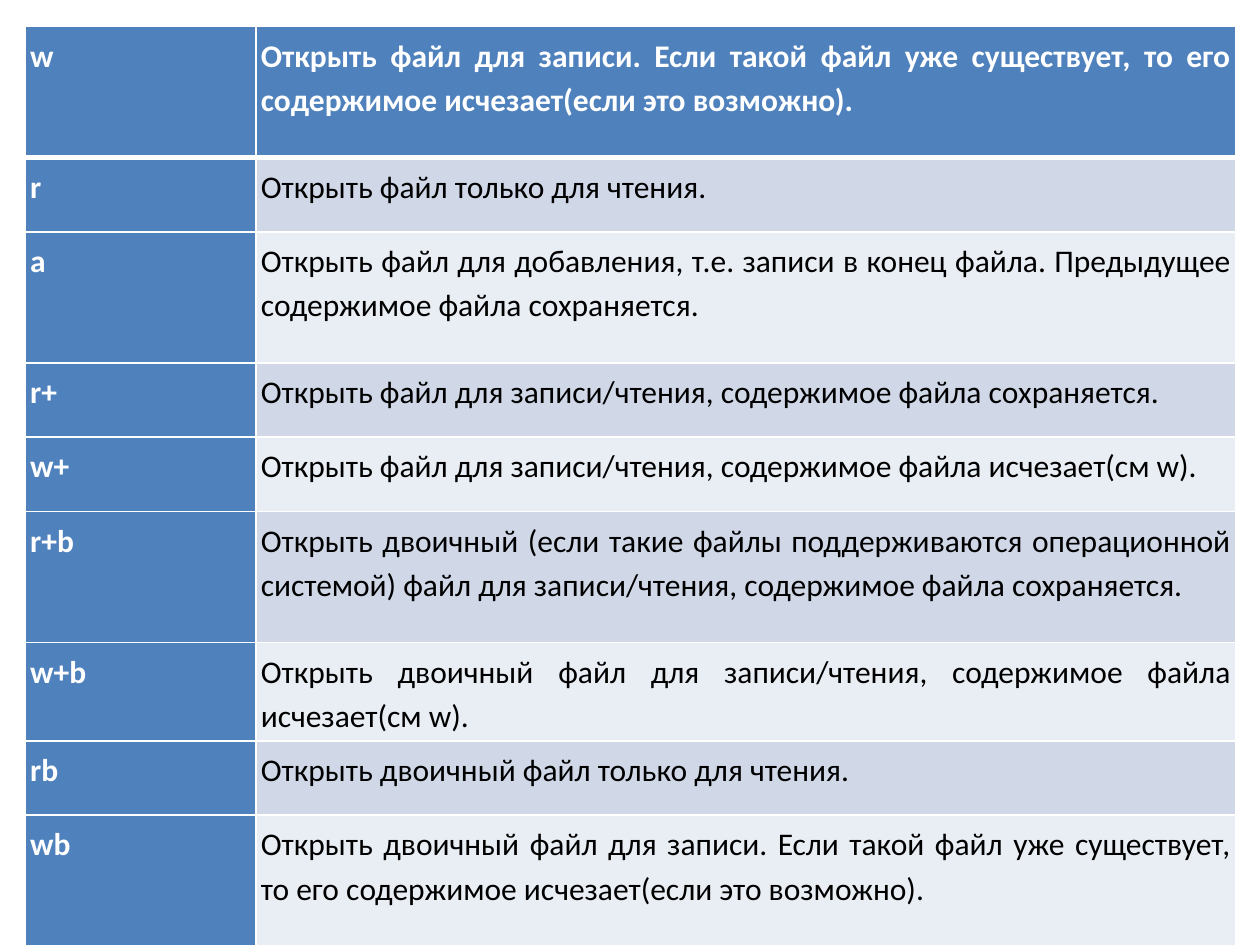
import pptx
import pptx.util
import pptx.dml.color
import pptx.enum.text
import pptx.oxml
import pptx.oxml.ns
from dataclasses import dataclass


@dataclass(frozen=True)
class Theme:
    font: str = "Calibri"
    size: int = 18
    head: str = "4F81BD"
    bands: tuple = ("E9EDF4", "D0D8E8")
    light: str = "FFFFFF"
    dark: str = "000000"
    thin: int = 1
    thick: int = 3
    inset: float = 0.04
    lead: float = 1.15


class Deck:
    COLS, ROWS = 100, 75

    def __init__(self, theme):
        self.theme = theme
        self.file = pptx.Presentation()
        self.file.slide_width = pptx.util.Inches(10)
        self.file.slide_height = pptx.util.Inches(7.5)
        self.slide = self.file.slides.add_slide(self.file.slide_layouts[6])

    def wide(self, cols):
        return round(self.file.slide_width * cols / self.COLS)

    def high(self, rows):
        return round(self.file.slide_height * rows / self.ROWS)

    def edge(self, cell, sides):
        props = cell._tc.get_or_add_tcPr()
        for spot, (side, width) in enumerate(sides.items()):
            line = pptx.oxml.parse_xml(
                f'<a:ln{side} {pptx.oxml.ns.nsdecls("a")} w="{pptx.util.Pt(width)}">'
                f'<a:solidFill><a:srgbClr val="{self.theme.light}"/></a:solidFill>'
                f'</a:ln{side}>')
            props.insert(spot, line)

    def cell(self, cell, text, fill, color, bold):
        look = self.theme
        cell.fill.solid()
        cell.fill.fore_color.rgb = pptx.dml.color.RGBColor.from_string(fill)
        inset = pptx.util.Inches(look.inset)
        cell.margin_left = cell.margin_right = inset
        cell.margin_top = cell.margin_bottom = inset
        para = cell.text_frame.paragraphs[0]
        para.text = text
        para.alignment = pptx.enum.text.PP_ALIGN.JUSTIFY
        para.line_spacing = look.lead
        font = para.runs[0].font
        font.name, font.size, font.bold = look.font, pptx.util.Pt(look.size), bold
        font.color.rgb = pptx.dml.color.RGBColor.from_string(color)

    def table(self, left, top, widths, heights, data):
        look = self.theme
        table = self.slide.shapes.add_table(
            len(data), len(widths), self.wide(left), self.high(top),
            self.wide(sum(widths)), self.high(sum(heights))).table
        for col, width in zip(table.columns, widths):
            col.width = self.wide(width)
        for row, height in zip(table.rows, heights):
            row.height = self.high(height)
        for r, line in enumerate(data):
            for c, text in enumerate(line):
                cell = table.cell(r, c)
                head = r == 0 or c == 0
                fill = look.head if head else look.bands[r % 2]
                self.cell(cell, text, fill, look.light if head else look.dark, head)
                self.edge(cell, {
                    "L": look.thin, "R": look.thin,
                    "T": look.thick if r == 1 else look.thin,
                    "B": look.thick if r == 0 else look.thin})

    def save(self):
        self.file.save("out.pptx")


TALL, LOW = 10.4, 5.9
MODES = [
    ("w", "Открыть файл для записи. Если такой файл уже существует, то его "
          "содержимое исчезает(если это возможно).", TALL),
    ("r", "Открыть файл только для чтения.", LOW),
    ("a", "Открыть файл для добавления, т.е. записи в конец файла. "
          "Предыдущее содержимое файла сохраняется.", TALL),
    ("r+", "Открыть файл для записи/чтения, содержимое файла сохраняется.", LOW),
    ("w+", "Открыть файл для записи/чтения, содержимое файла исчезает(см w).", LOW),
    ("r+b", "Открыть двоичный (если такие файлы поддерживаются операционной "
            "системой) файл для записи/чтения, содержимое файла сохраняется.", TALL),
    ("w+b", "Открыть двоичный файл для записи/чтения, содержимое файла "
            "исчезает(см w).", LOW),
    ("rb", "Открыть двоичный файл только для чтения.", LOW),
    ("wb", "Открыть двоичный файл для записи. Если такой файл уже существует, "
           "то его содержимое исчезает(если это возможно).", TALL),
]


def main():
    deck = Deck(Theme())
    deck.table(2, 2.1, (18.3, 77.8), [mode[2] for mode in MODES],
               [mode[:2] for mode in MODES])
    deck.save()


if __name__ == "__main__":
    main()
